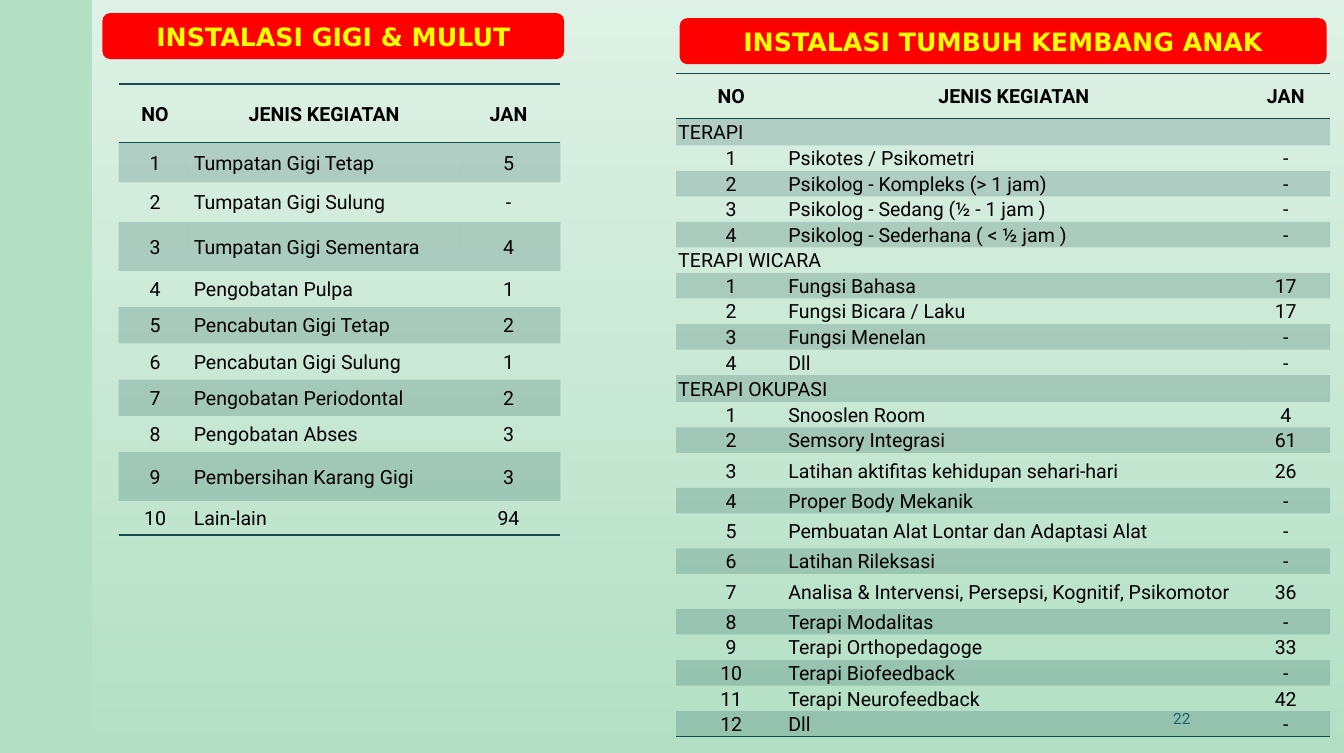
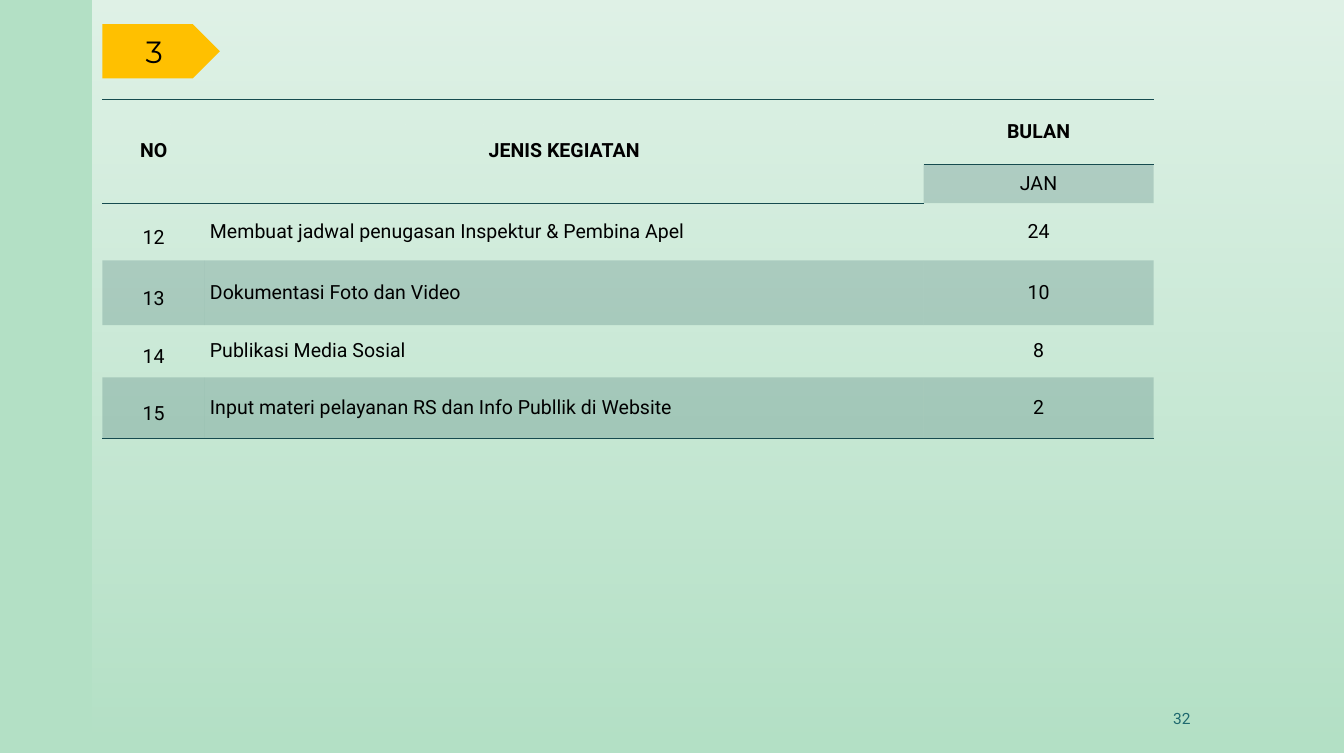
from dataclasses import dataclass

from pptx import Presentation
from pptx.dml.color import RGBColor
from pptx.enum import shapes, text
from pptx.oxml import parse_xml
from pptx.oxml.ns import nsdecls, qn
from pptx.util import Pt


@dataclass(frozen=True)
class Theme:
    mint: str = "B3E0C5"
    white: str = "FFFFFF"
    red: str = "FF0000"
    yellow: str = "FFFF00"
    amber: str = "FFC000"
    black: str = "000000"
    teal: str = "164B4F"
    page_teal: str = "1F696F"
    body_font: str = "Roboto"
    title_font: str = "DejaVu Sans"
    badge_font: str = "Montserrat"
    body_size: float = 14
    title_size: float = 18.1
    page_size: float = 11.1
    badge_size: float = 22
    band_opacity: int = 20
    panel_opacity: int = 60


THEME = Theme()
WIDTH, HEIGHT = 964, 540
PANEL_LEFT = 66.2
CONTENT_LEFT = 73.5
ALIGN = text.PP_ALIGN
HEADER = ("NO", "JENIS KEGIATAN", "JAN")

DENTAL = [
    HEADER,
    ("1", "Tumpatan Gigi Tetap", "5"),
    ("2", "Tumpatan Gigi Sulung", "-"),
    ("3", "Tumpatan Gigi Sementara", "4"),
    ("4", "Pengobatan Pulpa", "1"),
    ("5", "Pencabutan Gigi Tetap", "2"),
    ("6", "Pencabutan Gigi Sulung", "1"),
    ("7", "Pengobatan Periodontal", "2"),
    ("8", "Pengobatan Abses", "3"),
    ("9", "Pembersihan Karang Gigi", "3"),
    ("10", "Lain-lain", "94"),
]
DENTAL_HEIGHTS = [42, 28.5, 28.5, 35, *[26] * 5, 35, 24.5]

# A row with one entry is a section heading.
CHILD_GROWTH = [
    HEADER,
    ("TERAPI",),
    ("1", "Psikotes / Psikometri", "-"),
    ("2", "Psikolog - Kompleks (> 1 jam)", "-"),
    ("3", "Psikolog - Sedang (½ - 1 jam )", "-"),
    ("4", "Psikolog - Sederhana ( < ½ jam )", "-"),
    ("TERAPI WICARA",),
    ("1", "Fungsi Bahasa", "17"),
    ("2", "Fungsi Bicara / Laku", "17"),
    ("3", "Fungsi Menelan", "-"),
    ("4", "Dll", "-"),
    ("TERAPI OKUPASI",),
    ("1", "Snooslen Room", "4"),
    ("2", "Semsory Integrasi", "61"),
    ("3", "Latihan aktifitas kehidupan sehari-hari", "26"),
    ("4", "Proper Body Mekanik", "-"),
    ("5", "Pembuatan Alat Lontar dan Adaptasi Alat", "-"),
    ("6", "Latihan Rileksasi", "-"),
    ("7", "Analisa & Intervensi, Persepsi, Kognitif, Psikomotor", "36"),
    ("8", "Terapi Modalitas", "-"),
    ("9", "Terapi Orthopedagoge", "33"),
    ("10", "Terapi Biofeedback", "-"),
    ("11", "Terapi Neurofeedback", "42"),
    ("12", "Dll", "-"),
]
CHILD_HEIGHTS = [32.5, 19.2, *[18.1] * 4, 18, *[18.1] * 4, 19.2, *[18.1] * 2,
                 *[25.1, 18.1] * 3, *[18.1] * 4]

PUBLICITY = [
    ("NO", "JENIS KEGIATAN", "BULAN"),
    ("", "", "JAN"),
    ("12", "Membuat jadwal penugasan Inspektur & Pembina Apel", "24"),
    ("13", "Dokumentasi Foto dan Video", "10"),
    ("14", "Publikasi Media Sosial", "8"),
    ("15", "Input materi pelayanan RS dan Info Publlik di Website", "2"),
]
PUBLICITY_HEIGHTS = [47, 27.5, 41, 46.5, 37.5, 44]


def points(*lengths):
    return [Pt(length) for length in lengths]


def set_opacity(element, percents):
    """Give the colours inside element, in order, these opacities."""
    for colour, percent in zip(element.iter(qn("a:srgbClr")), percents):
        colour.append(parse_xml(f'<a:alpha {nsdecls("a")} val="{percent * 1000}"/>'))


def write(frame, words, font, size, colour, bold=False, align=ALIGN.CENTER):
    frame.word_wrap = True
    frame.vertical_anchor = text.MSO_ANCHOR.MIDDLE
    paragraph = frame.paragraphs[0]
    paragraph.alignment = align
    run = paragraph.add_run()
    run.text = words
    run.font.name, run.font.size, run.font.bold = font, Pt(size), bold
    run.font.color.rgb = RGBColor.from_string(colour)


def add_block(slide, kind, box, colour):
    block = slide.shapes.add_shape(kind, *points(*box))
    block.shadow.inherit = False
    block.line.fill.background()
    block.fill.solid()
    block.fill.fore_color.rgb = RGBColor.from_string(colour)
    return block


def add_panel(slide):
    """Draw the white veil that fades out downwards."""
    panel = add_block(slide, shapes.MSO_SHAPE.RECTANGLE,
                      (PANEL_LEFT, 0, WIDTH - PANEL_LEFT, HEIGHT), THEME.white)
    panel.fill.gradient()
    panel.fill.gradient_angle = 270
    for stop, position in zip(panel.fill.gradient_stops, (0, 1)):
        stop.position = position
        stop.color.rgb = RGBColor.from_string(THEME.white)
    set_opacity(panel.element.spPr, (THEME.panel_opacity, 0))


def add_page(deck, number):
    slide = deck.slides.add_slide(deck.slide_layouts[6])
    add_panel(slide)
    page_number = slide.shapes.add_textbox(*points(636.5, 500.4, 224.6, 28.8))
    write(page_number.text_frame, number, THEME.body_font, THEME.page_size,
          THEME.page_teal, align=ALIGN.RIGHT)
    return slide


def add_title(slide, words, left, top, width):
    banner = add_block(slide, shapes.MSO_SHAPE.ROUNDED_RECTANGLE,
                       (left, top, width, 33), THEME.red)
    write(banner.text_frame, words, THEME.title_font, THEME.title_size,
          THEME.yellow, bold=True)


def add_badge(slide, words):
    badge = add_block(slide, shapes.MSO_SHAPE.PENTAGON,
                      (CONTENT_LEFT, 17.3, 84.2, 39), THEME.amber)
    write(badge.text_frame, words, THEME.badge_font, THEME.badge_size, THEME.black)


def rule_cell(cell, sides):
    """Draw the cell's borders on the given sides, in the order T, B."""
    properties = cell._tc.get_or_add_tcPr()
    for place, side in enumerate(sides):
        properties.insert(place, parse_xml(
            f'<a:ln{side} {nsdecls("a")} w="12700"><a:solidFill>'
            f'<a:srgbClr val="{THEME.teal}"/></a:solidFill></a:ln{side}>'))


def style_cell(cell, banded, margins):
    (cell.margin_left, cell.margin_top,
     cell.margin_right, cell.margin_bottom) = points(*margins)
    cell.vertical_anchor = text.MSO_ANCHOR.MIDDLE
    if banded:
        cell.fill.solid()
        cell.fill.fore_color.rgb = RGBColor.from_string(THEME.teal)
        set_opacity(cell._tc.tcPr, (THEME.band_opacity,))
    else:
        cell.fill.background()


def write_cell(cell, words, bold, align):
    if words:
        write(cell.text_frame, words, THEME.body_font, THEME.body_size,
              THEME.black, bold, align)
        cell.text_frame.word_wrap = None
    else:
        # Keeps an empty cell from stretching its row.
        end = cell.text_frame.paragraphs[0]._p.get_or_add_endParaRPr()
        end.set("sz", str(THEME.body_size * 100))


def add_activity_table(slide, rows, left, top, widths, heights,
                       margins=(1.5, 1.5, 1.5, 0), tall_header=False):
    """Add a banded table; tall_header spreads the first two headings over two rows."""
    frame = slide.shapes.add_table(len(rows), len(widths), *points(
        left, top, sum(widths), sum(heights)))
    table = frame.table
    table.first_row = table.horz_banding = False
    no_style = "{2D5ABB26-0587-4C30-8999-92F81FD0307C}"
    table._tbl.tblPr.find(qn("a:tableStyleId")).text = no_style
    for column, width in zip(table.columns, widths):
        column.width = Pt(width)
    for row, height in zip(table.rows, heights):
        row.height = Pt(height)
    if tall_header:
        for column in (0, 1):
            table.cell(0, column).merge(table.cell(1, column))

    for r, entries in enumerate(rows):
        section = len(entries) == 1
        if section:
            table.cell(r, 0).merge(table.cell(r, 1))
            entries = (*entries, "", "")
        for c, words in enumerate(entries):
            cell = table.cell(r, c)
            left_aligned = section or (c == 1 and r > 0)
            write_cell(cell, words, r == 0, ALIGN.LEFT if left_aligned else ALIGN.CENTER)
            if cell.is_spanned:
                continue
            style_cell(cell, r % 2 == 1, margins)
            if r == 0:
                rule_cell(cell, "TB")
            elif r == len(rows) - 1:
                rule_cell(cell, "B")
    return table


def add_clinics_page(deck):
    slide = add_page(deck, "22")
    add_title(slide, "INSTALASI GIGI & MULUT", CONTENT_LEFT, 9.4, 331.2)
    add_activity_table(slide, DENTAL, 85, 60.3, (52.5, 190, 74.5), DENTAL_HEIGHTS)
    add_activity_table(slide, CHILD_GROWTH, 485, 52.5, (79, 326.5, 63.5), CHILD_HEIGHTS)
    add_title(slide, "INSTALASI TUMBUH KEMBANG ANAK", 487.5, 13, 464)


def add_publicity_page(deck):
    slide = add_page(deck, "32")
    table = add_activity_table(slide, PUBLICITY, CONTENT_LEFT, 71.2, (73.5, 515.5, 165),
                               PUBLICITY_HEIGHTS, margins=[3.6] * 4, tall_header=True)
    for r in range(2, len(PUBLICITY)):
        table.cell(r, 0).text_frame.paragraphs[0].line_spacing = 1.5
    add_badge(slide, "3")


def main():
    deck = Presentation()
    deck.slide_width, deck.slide_height = points(WIDTH, HEIGHT)
    backdrop = deck.slide_master.background.fill
    backdrop.solid()
    backdrop.fore_color.rgb = RGBColor.from_string(THEME.mint)
    add_clinics_page(deck)
    add_publicity_page(deck)
    deck.save("out.pptx")


if __name__ == "__main__":
    main()
